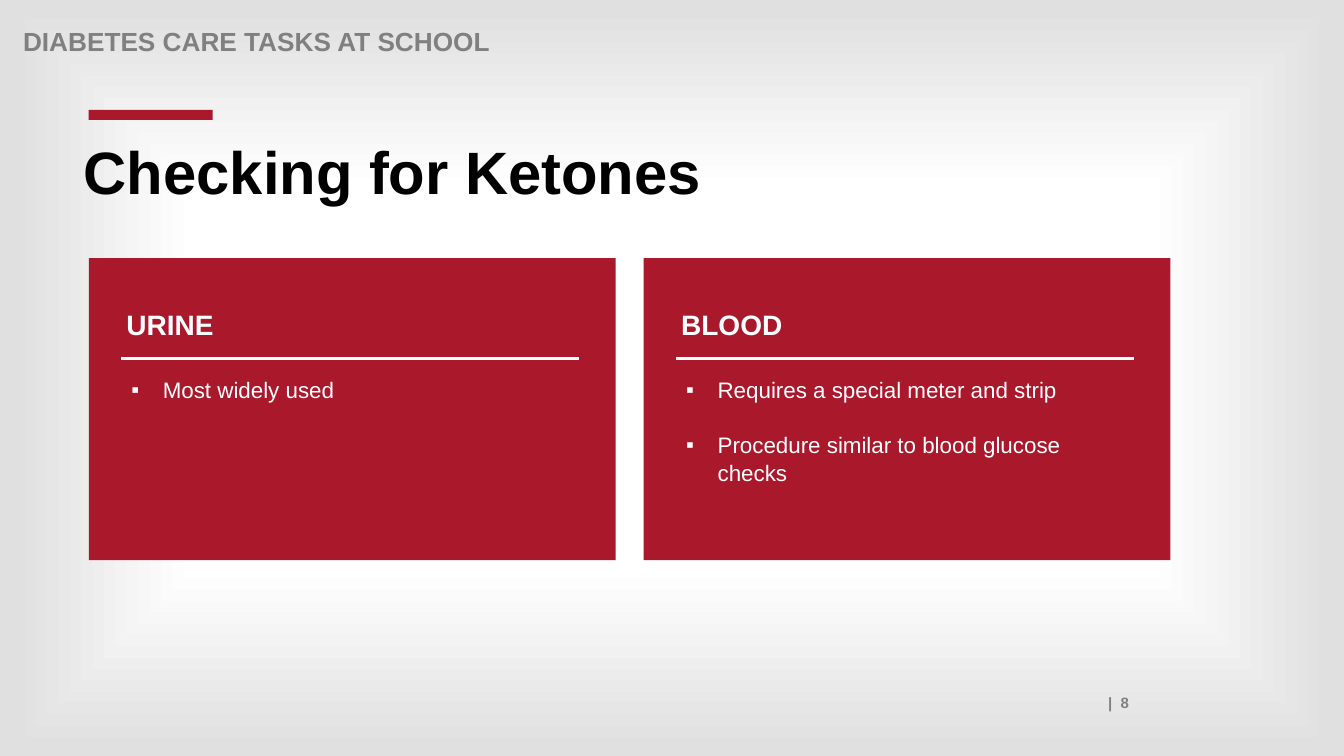
from pptx import Presentation, oxml
from pptx.dml import color
from pptx.enum import shapes, text
from pptx.oxml import ns
from pptx.util import Pt

RED, WHITE, GREY, BLACK = "AA182C", "FFFFFF", "808080", "000000"
FONT = "Arial"
COMPARISON_LAYOUT = 4


def rgb(value):
    return color.RGBColor.from_string(value)


class SlideBuilder:
    def __init__(self, page):
        self.page = page

    def background(self, stops):
        """Fill the page with a gradient spreading from its centre."""
        self.page.background.fill.gradient()
        gradient = self.page.element.find(".//" + ns.qn("a:gradFill"))
        for child in list(gradient):
            gradient.remove(child)
        listed = "".join(
            f'<a:gs pos="{percent * 1000}"><a:srgbClr val="{value}"/></a:gs>'
            for percent, value in stops)
        declared = ns.nsdecls("a")
        gradient.append(oxml.parse_xml(f"<a:gsLst {declared}>{listed}</a:gsLst>"))
        gradient.append(oxml.parse_xml(
            f'<a:path {declared} path="shape">'
            '<a:fillToRect l="50000" t="50000" r="50000" b="50000"/></a:path>'))

    def rectangle(self, left, top, width, height):
        shape = self.page.shapes.add_shape(
            shapes.MSO_SHAPE.RECTANGLE, Pt(left), Pt(top), Pt(width), Pt(height))
        shape.shadow.inherit = False
        shape.fill.solid()
        shape.fill.fore_color.rgb = rgb(RED)
        shape.line.fill.background()

    def rule(self, left, top, width):
        line = self.page.shapes.add_connector(
            shapes.MSO_CONNECTOR.STRAIGHT, Pt(left), Pt(top), Pt(left + width), Pt(top))
        line.line.color.rgb = rgb(WHITE)
        line.line.width = Pt(2)
        line.element.spPr.append(oxml.parse_xml(f"<a:effectLst {ns.nsdecls('a')}/>"))

    def textbox(self, place, words, **style):
        box = self.page.shapes.add_textbox(*map(Pt, place))
        self.set_text(box, [words], **style)

    def placeholder(self, index, place, lines, **style):
        box = self.page.placeholders[index]
        box.left, box.top, box.width, box.height = map(Pt, place)
        self.page.shapes.element.append(box.element)  # bring in front of the cards
        self.set_text(box, lines, **style)

    def set_text(self, box, lines, size, ink, bold=True, align=text.PP_ALIGN.LEFT,
                 spacing=1.0, gap=0, bullet=False):
        frame = box.text_frame
        frame.word_wrap = True
        frame.auto_size = text.MSO_AUTO_SIZE.NONE
        frame.vertical_anchor = text.MSO_ANCHOR.TOP
        for number, words in enumerate(lines):
            para = frame.add_paragraph() if number else frame.paragraphs[0]
            if bullet:
                self.bullet(para)
            para.alignment = align
            para.line_spacing = spacing
            para.space_before = Pt(gap if number else 0)
            para.space_after = Pt(0)
            span = para.add_run()
            span.text = words
            span.font.name = FONT
            span.font.size = Pt(size)
            span.font.bold = bold
            span.font.color.rgb = rgb(ink)

    def bullet(self, para):
        properties = para._p.get_or_add_pPr()
        properties.set("marL", str(Pt(22.5)))
        properties.set("indent", str(-Pt(22.5)))
        properties.append(oxml.parse_xml(
            f'<a:buFont {ns.nsdecls("a")} typeface="{FONT}"/>'))
        properties.append(oxml.parse_xml(f'<a:buChar {ns.nsdecls("a")} char="▪"/>'))


def main():
    deck = Presentation()
    deck.slide_width, deck.slide_height = Pt(960), Pt(540)
    page = deck.slides.add_slide(deck.slide_layouts[COMPARISON_LAYOUT])
    builder = SlideBuilder(page)

    # Background, section name and page number
    builder.background([(12, WHITE), (50, WHITE), (98, "E0E0E0")])
    builder.textbox((79.5, 491.8, 734, 20), "|  8", size=10.7, ink=GREY,
                    align=text.PP_ALIGN.RIGHT)
    builder.textbox((9.4, 17.3, 792, 20), "DIABETES CARE TASKS AT SCHOOL",
                    size=18.7, ink=GREY, spacing=0.9)

    # Title with its accent bar
    builder.rectangle(63.4, 78.5, 88.6, 7.2)
    builder.placeholder(0, (52.6, 98.6, 794, 64), ["Checking for Ketones"],
                        size=42.7, ink=BLACK, spacing=0.9)

    # One card for each way of checking
    cards = [
        ("URINE", ["Most widely used"]),
        ("BLOOD", ["Requires a special meter and strip",
                   "Procedure similar to blood glucose checks"]),
    ]
    for number, (heading, points) in enumerate(cards):
        left = 63.4 + number * 396.3
        builder.rectangle(left, 184.4, 376.4, 215.8)
        builder.placeholder(1 + 2 * number, (left + 19.6, 216, 320.4, 31.5),
                            [heading], size=20, ink=WHITE)
        builder.placeholder(2 + 2 * number, (left + 23.2, 264.2, 313.2, 85),
                            points, size=16, ink=WHITE, bold=False,
                            spacing=1.05, gap=19.3, bullet=True)
        builder.rule(left + 23.2, 256, 327)

    deck.save("out.pptx")


if __name__ == "__main__":
    main()
